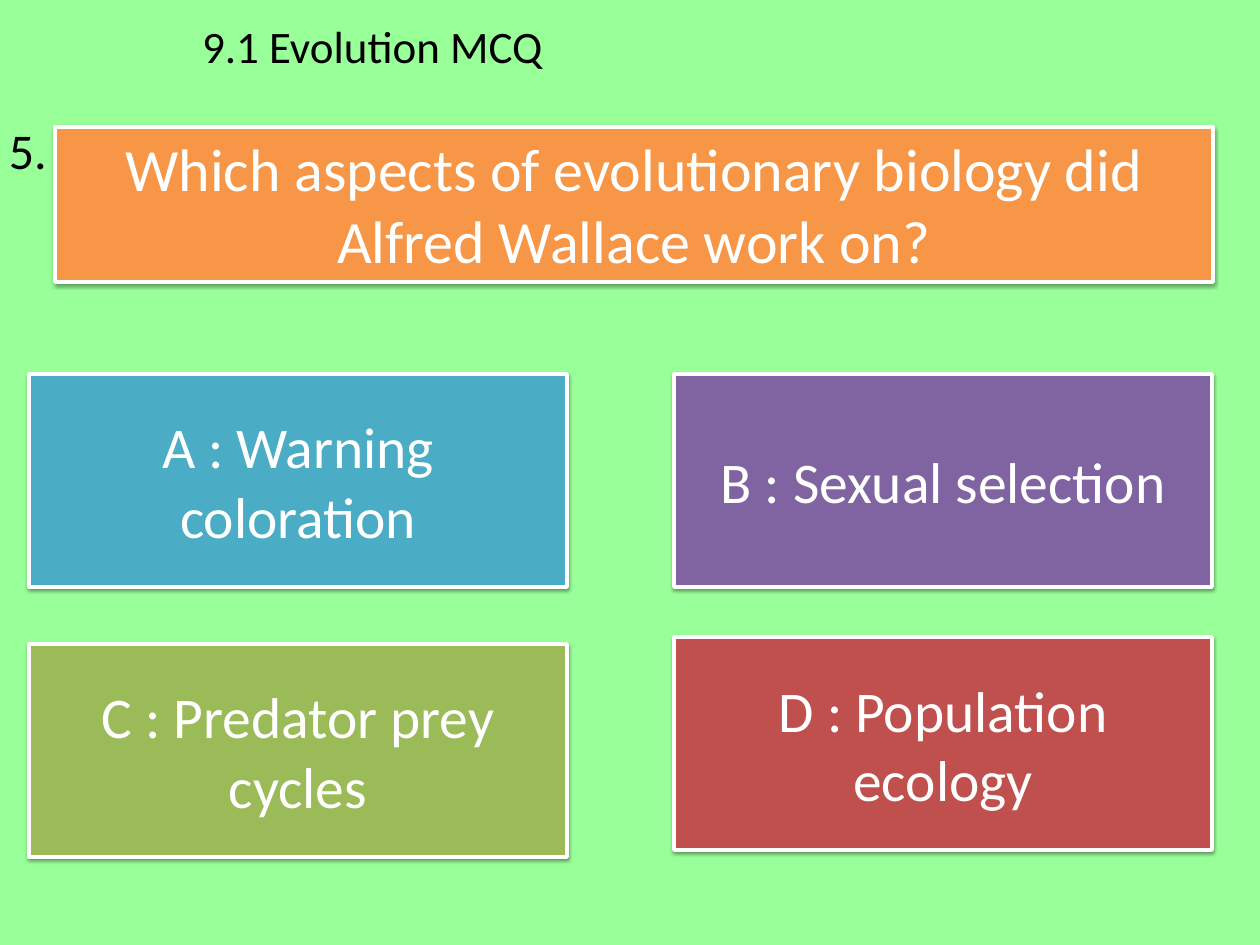
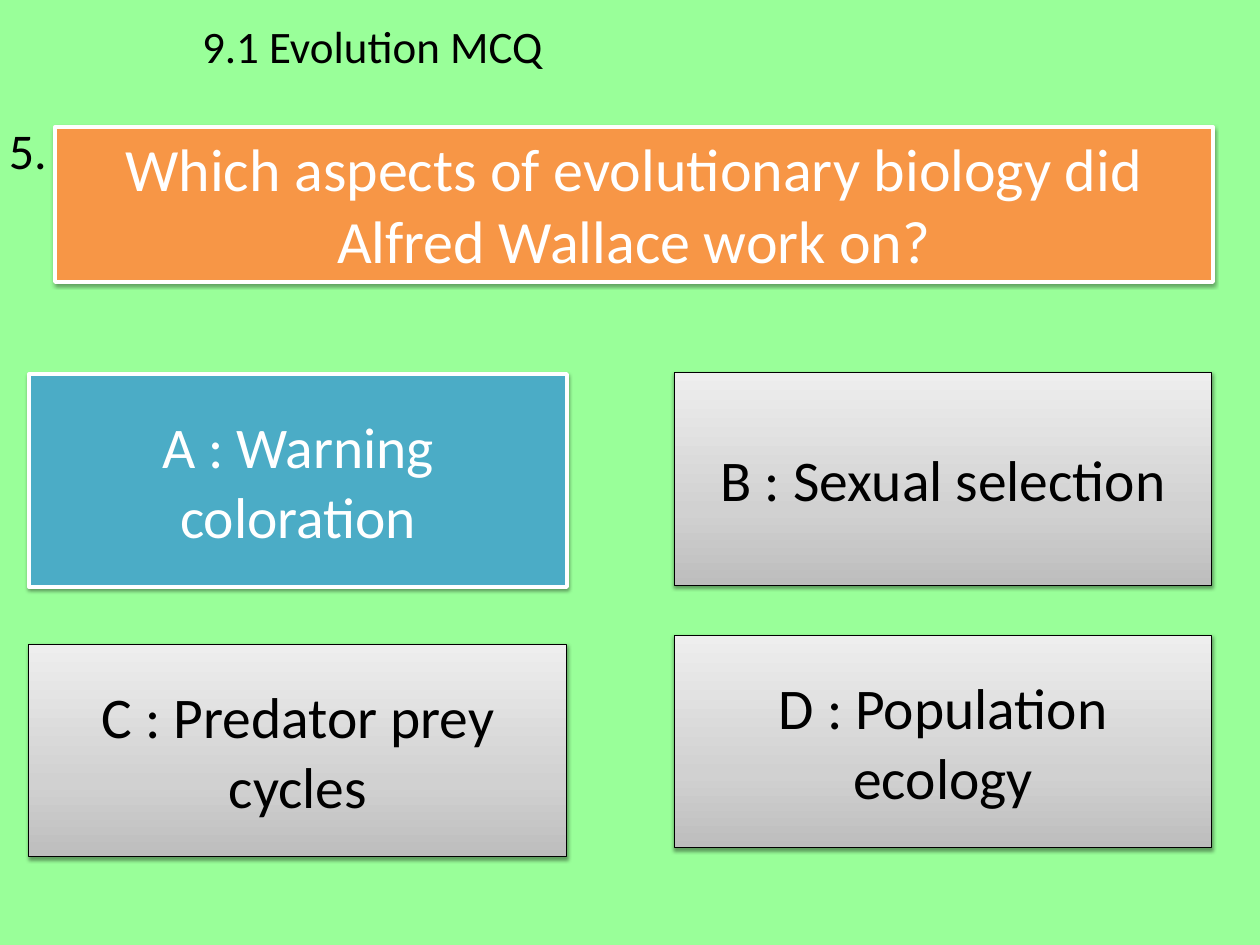
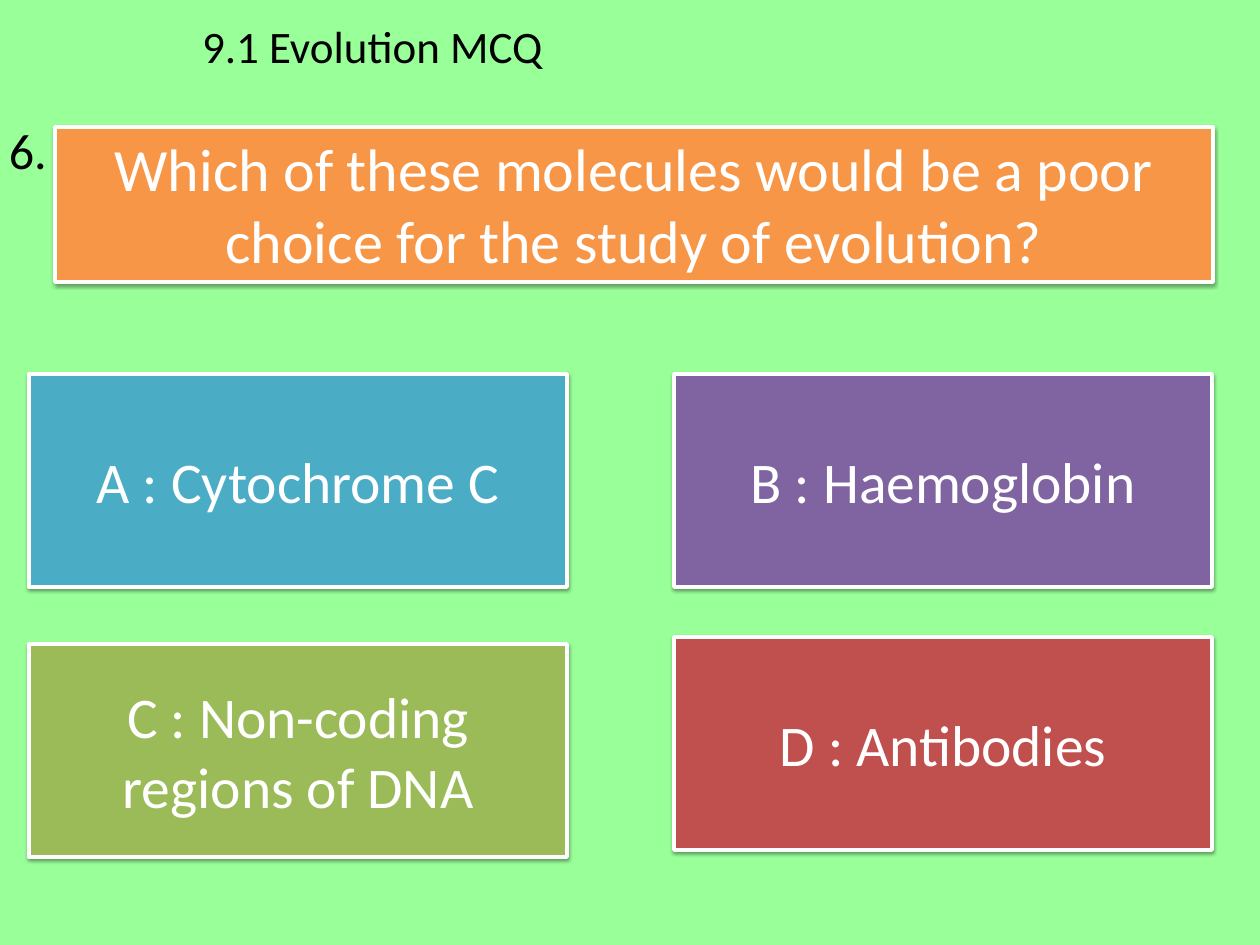
import copy

import pptx
import pptx.dml.color
import pptx.enum.shapes
import pptx.enum.text
import pptx.oxml
import pptx.oxml.ns
import pptx.util

EMU_PER_PX = 10160
FONT = "Calibri"
BLACK, WHITE = "000000", "FFFFFF"
BACKGROUND = "99FF99"
QUESTION_FILL = "F79646"
DIMMED_STOPS = [(0, "BDBDBD"), (0.35, "D1D1D1"), (1, "EEEEEE")]
DIMMED_RISE = 2

HEADING = "9.1 Evolution MCQ"
HEADING_BOX = (193, 14, 623, 64)
NUMBER_BOX = (0, 115, 77, 69)
QUESTION_BOX = (55, 127, 1158, 155)
ANSWER_SIZE = (538, 213)
ANSWER_STYLES = {
    "C": (29, 644, "9BBB59"),
    "A": (29, 374, "4BACC6"),
    "B": (674, 374, "8064A2"),
    "D": (674, 637, "C0504D"),
}

WALLACE = (
    "5.",
    "Which aspects of evolutionary biology did Alfred Wallace work on?",
    {
        "A": "Warning coloration",
        "B": "Sexual selection",
        "C": "Predator prey cycles",
        "D": "Population ecology",
    },
)
MOLECULES = (
    "6.",
    "Which of these molecules would be a poor choice for the study of evolution?",
    {
        "A": "Cytochrome C",
        "B": "Haemoglobin",
        "C": "Non-coding regions of DNA",
        "D": "Antibodies",
    },
)

SHADOW = (
    '<a:outerShdw xmlns:a="http://schemas.openxmlformats.org/drawingml/2006/main" '
    'blurRad="40000" dist="20000" dir="5400000" rotWithShape="0">'
    '<a:srgbClr val="000000"><a:alpha val="38000"/></a:srgbClr></a:outerShdw>'
)


def px(length):
    return pptx.util.Emu(length * EMU_PER_PX)


def rgb(code):
    return pptx.dml.color.RGBColor.from_string(code)


def write(frame, text, size, color, centred=False, middle=False):
    anchors = pptx.enum.text.MSO_ANCHOR
    aligns = pptx.enum.text.PP_ALIGN
    frame.word_wrap = True
    frame.auto_size = pptx.enum.text.MSO_AUTO_SIZE.NONE
    frame.vertical_anchor = anchors.MIDDLE if middle else anchors.TOP
    paragraph = frame.paragraphs[0]
    paragraph.alignment = aligns.CENTER if centred else aligns.LEFT
    run = paragraph.add_run()
    run.text = text
    run.font.name = FONT
    run.font.size = pptx.util.Pt(size)
    run.font.color.rgb = rgb(color)


def fill_dimmed(fill):
    fill.gradient()
    fill.gradient_angle = 90
    stop_list = fill._xPr.find(".//" + pptx.oxml.ns.qn("a:gsLst"))
    stop_list.append(copy.deepcopy(stop_list[0]))
    for stop, (position, color) in zip(fill.gradient_stops, DIMMED_STOPS):
        stop.position = position
        stop.color.rgb = rgb(color)


def add_card(slide, box, text, size, color, middle=False):
    card = slide.shapes.add_shape(
        pptx.enum.shapes.MSO_SHAPE.RECTANGLE, *map(px, box)
    )
    dimmed = color is None
    if dimmed:
        fill_dimmed(card.fill)
    else:
        card.fill.solid()
        card.fill.fore_color.rgb = rgb(color)
    ink = BLACK if dimmed else WHITE
    card.line.color.rgb = rgb(ink)
    card.line.width = pptx.util.Pt(0.75 if dimmed else 3)
    card.shadow.inherit = False
    effects = card._element.spPr.find(pptx.oxml.ns.qn("a:effectLst"))
    effects.append(pptx.oxml.parse_xml(SHADOW))
    write(card.text_frame, text, size, ink, centred=True, middle=middle)


def add_heading(slide):
    heading = slide.shapes.title
    heading.left, heading.top, heading.width, heading.height = map(px, HEADING_BOX)
    write(heading.text_frame, HEADING, 36, BLACK)


def add_number(slide, number):
    label = slide.shapes.add_textbox(*map(px, NUMBER_BOX))
    write(label.text_frame, number, 40, BLACK)


def add_answer(slide, letter, answer, dimmed):
    left, top, color = ANSWER_STYLES[letter]
    if dimmed:
        color = None
        if letter in "BD":
            top -= DIMMED_RISE
    add_card(slide, (left, top, *ANSWER_SIZE), f"{letter} : {answer}", 46, color, True)


def add_question_slide(deck, quiz_item, revealed=None):
    number, question, answers = quiz_item
    slide = deck.slides.add_slide(deck.slide_layouts.get_by_name("Title Only"))
    add_heading(slide)
    add_card(slide, QUESTION_BOX, question, 48, QUESTION_FILL)
    add_number(slide, number)
    for letter in ANSWER_STYLES:
        dimmed = revealed is not None and letter != revealed
        add_answer(slide, letter, answers[letter], dimmed)


def main():
    deck = pptx.Presentation()
    deck.slide_width, deck.slide_height = px(1260), px(945)
    background = deck.slide_master.background.fill
    background.solid()
    background.fore_color.rgb = rgb(BACKGROUND)
    add_question_slide(deck, WALLACE)
    add_question_slide(deck, WALLACE, revealed="A")
    add_question_slide(deck, MOLECULES)
    deck.save("out.pptx")


if __name__ == "__main__":
    main()
